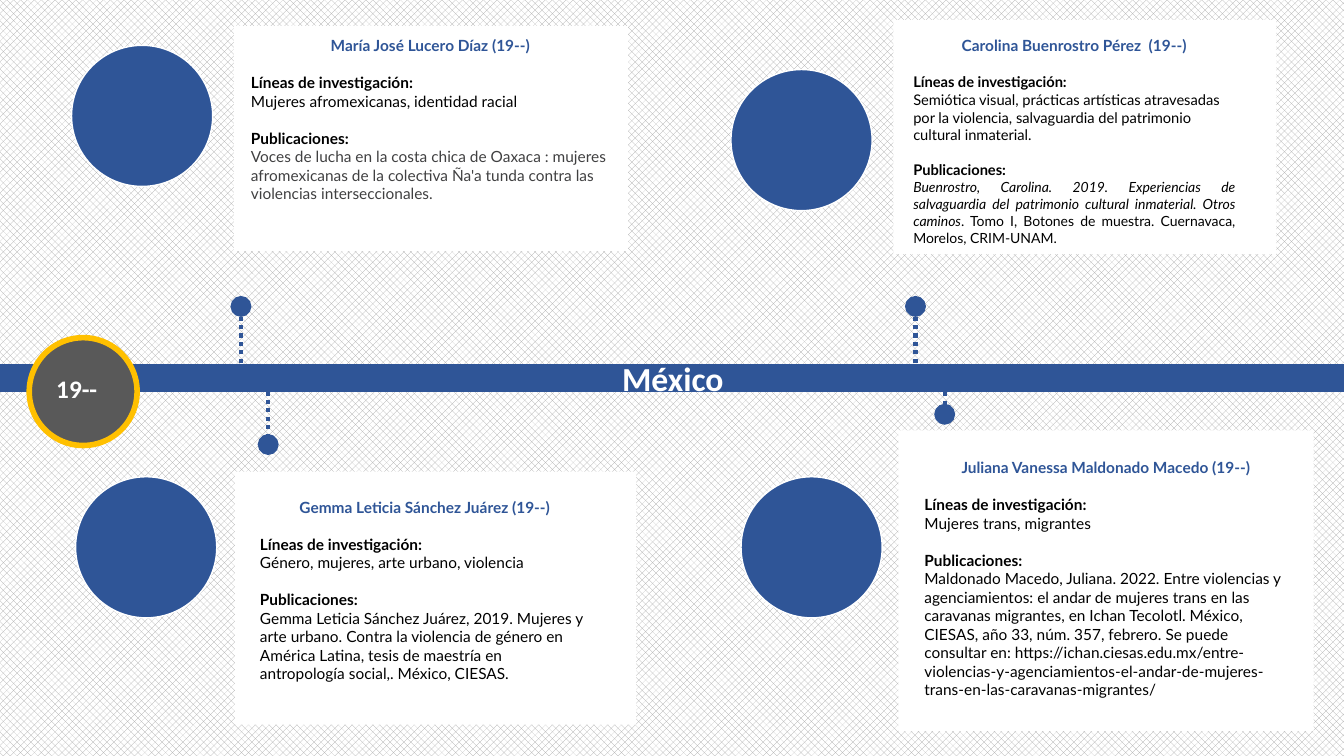
from pptx import Presentation
from pptx import util as u
from pptx.dml.color import RGBColor
from pptx.enum import dml, shapes, text
from pptx.oxml.ns import qn
from lxml import etree
from dataclasses import dataclass

LINES_HEAD = "Líneas de investigación:"
WORKS_HEAD = "Publicaciones:"

CARDS = [
    dict(name="María José Lucero Díaz (19--)",
         topic="Mujeres afromexicanas, identidad racial",
         works=[("Voces de lucha en la costa chica de Oaxaca : mujeres afromexicanas de la "
                 "colectiva Ña'a tunda contra las violencias interseccionales.", False)],
         works_color="404041",
         panel=(2.32, 0.26, 3.91, 2.23), box=(2.39, 0.31, 3.76, 2.14), portrait=(0.71, 0.45)),
    dict(name="Carolina Buenrostro Pérez  (19--)",
         topic="Semiótica visual, prácticas artísticas atravesadas por la violencia, "
               "salvaguardia del patrimonio cultural inmaterial.",
         works=[("Buenrostro, Carolina. 2019. Experiencias de salvaguardia del patrimonio "
                 "cultural inmaterial. Otros caminos", True),
                (". Tomo I, Botones de muestra. Cuernavaca, Morelos, CRIM-UNAM.", False)],
         body_size=10.5, works_size=10, works_align=text.PP_ALIGN.JUSTIFY,
         panel=(8.86, 0.2, 3.8, 2.32), box=(8.96, 0.31, 3.39, 2.56), portrait=(7.25, 0.69)),
    dict(name="Gemma Leticia Sánchez Juárez (19--)",
         topic="Género, mujeres, arte urbano, violencia",
         works=[("Gemma Leticia Sánchez Juárez, 2019. Mujeres y arte urbano. Contra la violencia "
                 "de género en América Latina, tesis de maestría en antropología social,. "
                 "México, CIESAS.", False)],
         panel=(2.33, 4.68, 3.98, 2.51), box=(2.48, 4.89, 3.47, 2.31), portrait=(0.75, 4.73)),
    dict(name="Juliana Vanessa Maldonado Macedo (19--)",
         topic="Mujeres trans, migrantes",
         works=[("Maldonado Macedo, Juliana. 2022. Entre violencias y agenciamientos: el andar de "
                 "mujeres trans en las caravanas migrantes, en Ichan Tecolotl. México, CIESAS, "
                 "año 33, núm. 357, febrero. Se puede consultar en: "
                 "https://ichan.ciesas.edu.mx/entre-violencias-y-agenciamientos-el-andar-de-"
                 "mujeres-trans-en-las-caravanas-migrantes/", False)],
         panel=(8.91, 4.27, 4.12, 2.98), box=(9.07, 4.5, 3.8, 2.51), portrait=(7.35, 4.73)),
]
PINS = [(2.39, 3.6, 3.04), (2.66, 3.8, 4.41), (9.08, 3.6, 3.04), (9.37, 3.64, 4.11)]


@dataclass(frozen=True)
class Theme:
    blue: str = "2F5597"
    gold: str = "FFC000"
    gray: str = "595959"
    hatch: str = "A6A6A6"
    white: str = "FFFFFF"
    black: str = "000000"
    head_font: str = "Calibri"
    body_font: str = "Lato"
    title: float = 24
    year: float = 18
    body: float = 11


T = Theme()
W, H = 13.33, 7.5
PORTRAIT = 1.4
LEADING = 1.2


def rgb(value):
    return RGBColor.from_string(value)


def inches(box):
    return [u.Inches(v) for v in box]


def add_text(tf, content, size=T.body, color=T.black, font=T.body_font, bold=False,
             align=text.PP_ALIGN.LEFT, before=0, first=False):
    p = tf.paragraphs[0] if first else tf.add_paragraph()
    p.alignment = align
    p.line_spacing = 1.0
    p.space_before, p.space_after = u.Pt(before), u.Pt(0)
    runs = [(content, False)] if isinstance(content, str) else content
    for words, italic in runs:
        r = p.add_run()
        r.text = words
        r.font.name, r.font.size = font, u.Pt(size)
        r.font.bold, r.font.italic = bold, italic
        r.font.color.rgb = rgb(color)


def prepare(sp):
    tf = sp.text_frame
    tf.word_wrap = True
    tf.auto_size = text.MSO_AUTO_SIZE.NONE
    tf.vertical_anchor = text.MSO_ANCHOR.TOP
    tf.margin_left = tf.margin_right = u.Inches(0.1)
    tf.margin_top = tf.margin_bottom = u.Inches(0.05)
    return tf


def add_box(s, box):
    return prepare(s.shapes.add_textbox(*inches(box)))


def add_figure(s, kind, box, fill, line=None, width=1):
    sp = s.shapes.add_shape(kind, *inches(box))
    sp.shadow.inherit = False
    sp.fill.solid()
    sp.fill.fore_color.rgb = rgb(fill)
    if line:
        sp.line.color.rgb = rgb(line)
        sp.line.width = u.Pt(width)
    else:
        sp.line.fill.background()


def add_line(s, start, end, width, pin=False):
    sp = s.shapes.add_connector(shapes.MSO_CONNECTOR.STRAIGHT, *inches(start + end))
    sp.line.color.rgb = rgb(T.blue)
    sp.line.width = u.Pt(width)
    if pin:
        sp.line.dash_style = dml.MSO_LINE.ROUND_DOT
        ln = sp.line._get_or_add_ln()
        etree.SubElement(ln, qn("a:tailEnd"), type="oval", w="lg", len="lg")
    etree.SubElement(sp._element.spPr, qn("a:effectLst"))


def add_card(s, card):
    size = card.get("body_size", T.body)
    add_figure(s, shapes.MSO_SHAPE.RECTANGLE, card["panel"], T.white)
    add_figure(s, shapes.MSO_SHAPE.OVAL, card["portrait"] + (PORTRAIT, PORTRAIT),
               T.blue, T.white)
    tf = add_box(s, card["box"])
    add_text(tf, card["name"], color=T.blue, bold=True,
             align=text.PP_ALIGN.CENTER, first=True)
    add_text(tf, LINES_HEAD, size=size, bold=True, before=T.body * LEADING)
    add_text(tf, card["topic"], size=size)
    add_text(tf, WORKS_HEAD, size=size, bold=True, before=size * LEADING)
    add_text(tf, card["works"], size=card.get("works_size", size),
             color=card.get("works_color", T.black),
             align=card.get("works_align", text.PP_ALIGN.LEFT))


def main():
    prs = Presentation()
    prs.slide_width, prs.slide_height = u.Inches(W), u.Inches(H)
    s = prs.slides.add_slide(prs.slide_layouts[5])

    bg = s.background.fill
    bg.patterned()
    bg.pattern = dml.MSO_PATTERN.PERCENT_50
    bg.fore_color.rgb, bg.back_color.rgb = rgb(T.hatch), rgb(T.white)

    add_line(s, (0, H / 2), (W, H / 2), 20)
    title = s.shapes.title
    title.left, title.top, title.width, title.height = inches((6.07, 3.5, 1.36, 0.5))
    add_text(prepare(title), "México", size=T.title, color=T.white,
             font=T.head_font, bold=True, first=True)
    s.shapes._spTree.append(title._element)

    add_figure(s, shapes.MSO_SHAPE.OVAL, (0.29, 3.35, 1.07, 1.07), T.gray, T.gold, 4)
    add_text(add_box(s, (0.46, 3.65, 0.74, 0.4)), "19--", size=T.year, color=T.white,
             font=T.head_font, bold=True, first=True)

    for card in CARDS:
        add_card(s, card)
    for x, base, tip in PINS:
        add_line(s, (x, base), (x, tip), 3, pin=True)

    prs.save("out.pptx")


if __name__ == "__main__":
    main()
